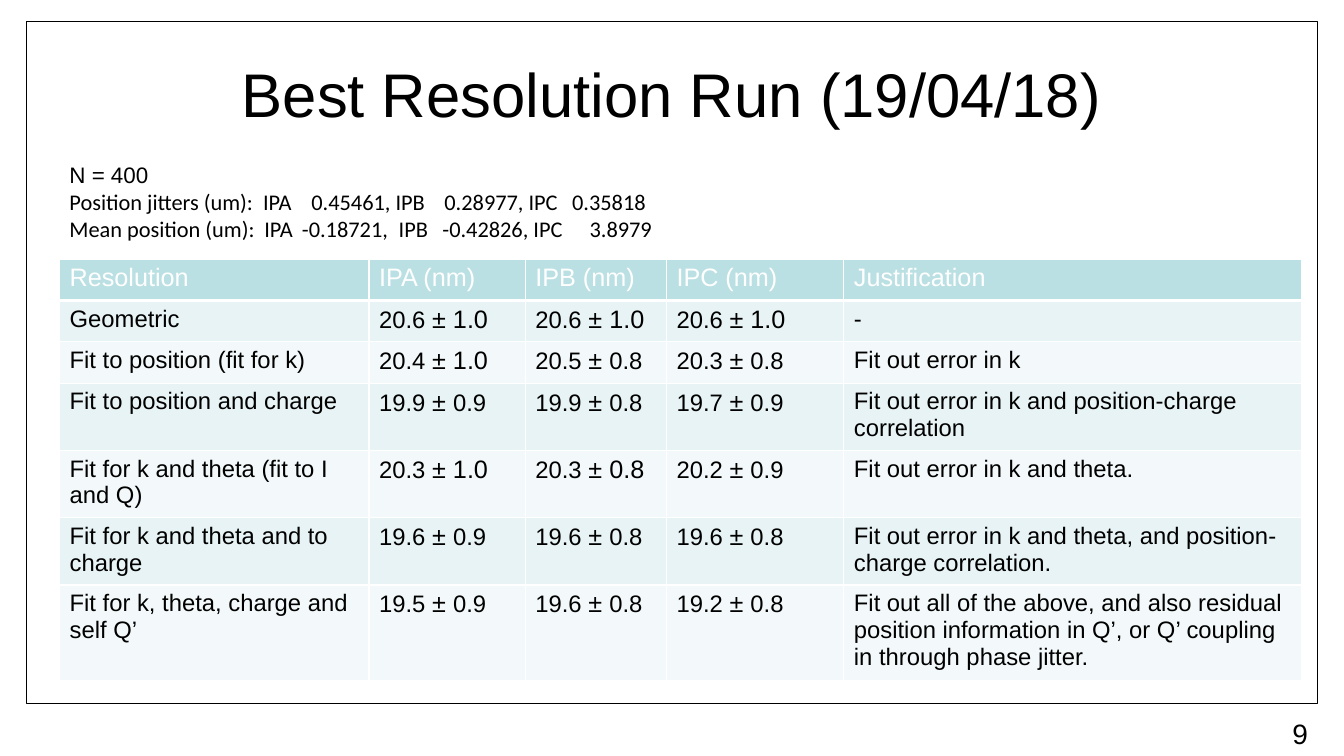
import pptx
import pptx.util
import pptx.dml.color
import pptx.enum.shapes
import pptx.enum.text
import pptx.oxml
import pptx.oxml.ns

RGB = pptx.dml.color.RGBColor
BLACK = RGB(0x00, 0x00, 0x00)
WHITE = RGB(0xFF, 0xFF, 0xFF)
HEAD = RGB(0xBB, 0xE0, 0xE3)
BANDS = [RGB(0xF3, 0xF9, 0xFA), RGB(0xE7, 0xF3, 0xF4)]
ALIGN = pptx.enum.text.PP_ALIGN
NS = pptx.oxml.ns.nsdecls("a")

deck = pptx.Presentation()
deck.slide_width = pptx.util.Inches(13.33)
deck.slide_height = pptx.util.Inches(7.5)
slide = deck.slides.add_slide(deck.slide_layouts[6])

# Grid of 100 columns and 100 rows
COL = deck.slide_width / 100
ROW = deck.slide_height / 100


def area(left, top, width, height):
    return int(left * COL), int(top * ROW), int(width * COL), int(height * ROW)


def write(frame, *parts, size=17, font="Arial", color=BLACK, align=ALIGN.LEFT, tabs=()):
    """Add a paragraph; a part is a string or a (string, size) pair."""
    frame.word_wrap = True
    para = frame.paragraphs[-1]
    if para.runs:
        para = frame.add_paragraph()
    para.alignment = align
    if tabs:
        stops = "".join(f'<a:tab pos="{int(t * COL)}" algn="l"/>' for t in tabs)
        para._p.get_or_add_pPr().append(
            pptx.oxml.parse_xml(f"<a:tabLst {NS}>{stops}</a:tabLst>"))
    for part in parts:
        words, points = (part, size) if isinstance(part, str) else part
        run = para.add_run()
        run.text = words
        run.font.size = pptx.util.Pt(points)
        run.font.name = font
        run.font.color.rgb = color


# Frame
frame = slide.shapes.add_shape(
    pptx.enum.shapes.MSO_SHAPE.RECTANGLE, *area(1.95, 2.8, 96.1, 90.27))
frame.shadow.inherit = False
frame.fill.background()
frame.line.color.rgb = BLACK
frame.line.width = pptx.util.Pt(0.75)

# Title
title = slide.shapes.add_textbox(*area(5, 4, 90, 16.67)).text_frame
title.vertical_anchor = pptx.enum.text.MSO_ANCHOR.MIDDLE
write(title, "Best Resolution Run (19/04/18)", size=44, align=ALIGN.CENTER)

# Results table
WIDTHS = [23.03, 11.63, 10.5, 13.2, 34.06]
DATA = [
    ["Resolution", "IPA (nm)", "IPB (nm)", "IPC (nm)", "Justification"],
    ["Geometric", "20.6 ± 1.0", "20.6 ± 1.0", "20.6 ± 1.0", "-"],
    ["Fit to position (fit for k)", "20.4 ± 1.0", "20.5 ± 0.8", "20.3 ± 0.8",
     "Fit out error in k"],
    ["Fit to position and charge", "19.9 ± 0.9", "19.9 ± 0.8", "19.7 ± 0.9",
     "Fit out error in k and position-charge correlation"],
    ["Fit for k and theta (fit to I and Q)", "20.3 ± 1.0", "20.3 ± 0.8", "20.2 ± 0.9",
     "Fit out error in k and theta."],
    ["Fit for k and theta and to charge", "19.6 ± 0.9", "19.6 ± 0.8", "19.6 ± 0.8",
     "Fit out error in k and theta, and position-charge correlation."],
    ["Fit for k, theta, charge and self Q’", "19.5 ± 0.9", "19.6 ± 0.8", "19.2 ± 0.8",
     "Fit out all of the above, and also residual position information in Q’, "
     "or Q’ coupling in through phase jitter."],
]
BIG = (4, 2)  # the one small error set in the larger size
HIGH = 5.47
table = slide.shapes.add_table(
    len(DATA), len(WIDTHS), *area(4.43, 34.27, sum(WIDTHS), HIGH * len(DATA))).table
table.first_row = table.horz_banding = False
for c, width in enumerate(WIDTHS):
    table.columns[c].width = int(width * COL)
for r, line in enumerate(DATA):
    table.rows[r].height = int(HIGH * ROW)
    for c, words in enumerate(line):
        cell = table.cell(r, c)
        cell.fill.solid()
        cell.fill.fore_color.rgb = BANDS[r % 2] if r else HEAD
        if r == 0:
            write(cell.text_frame, words, size=18, color=WHITE)
        elif "±" in words:
            mean, error = words.split("± ")
            tail = 18 if error == "1.0" or (r, c) == BIG else 17
            write(cell.text_frame, mean, ("± ", 18), (error, tail))
        else:
            write(cell.text_frame, words)
        # White borders, thicker under the header
        for i, side in enumerate("LRTB"):
            thick = pptx.util.Pt(3 if r == 0 and side == "B" else 1)
            cell._tc.get_or_add_tcPr().insert(i, pptx.oxml.parse_xml(
                f'<a:ln{side} {NS} w="{thick}"><a:solidFill>'
                f'<a:srgbClr val="{WHITE}"/></a:solidFill></a:ln{side}>'))

# Run notes
notes = slide.shapes.add_textbox(*area(4.43, 20.67, 82.82, 12.13)).text_frame
write(notes, "N = 400", size=16)
write(notes, "Position jitters (um):\tIPA\t0.45461, IPB\t0.28977, IPC\t0.35818",
      size=16, font="Calibri", tabs=[14.4, 18, 27.9, 37.4])
write(notes, "Mean position (um):\tIPA\t-0.18721,\tIPB\t-0.42826, IPC\t3.8979",
      size=16, font="Calibri", tabs=[14.5, 17.3, 24.5, 27.75, 38.7])

# Page number
page = slide.shapes.add_textbox(*area(92.57, 94.13, 5.48, 4.27)).text_frame
write(page, "9", size=20, align=ALIGN.RIGHT)

deck.save("out.pptx")
